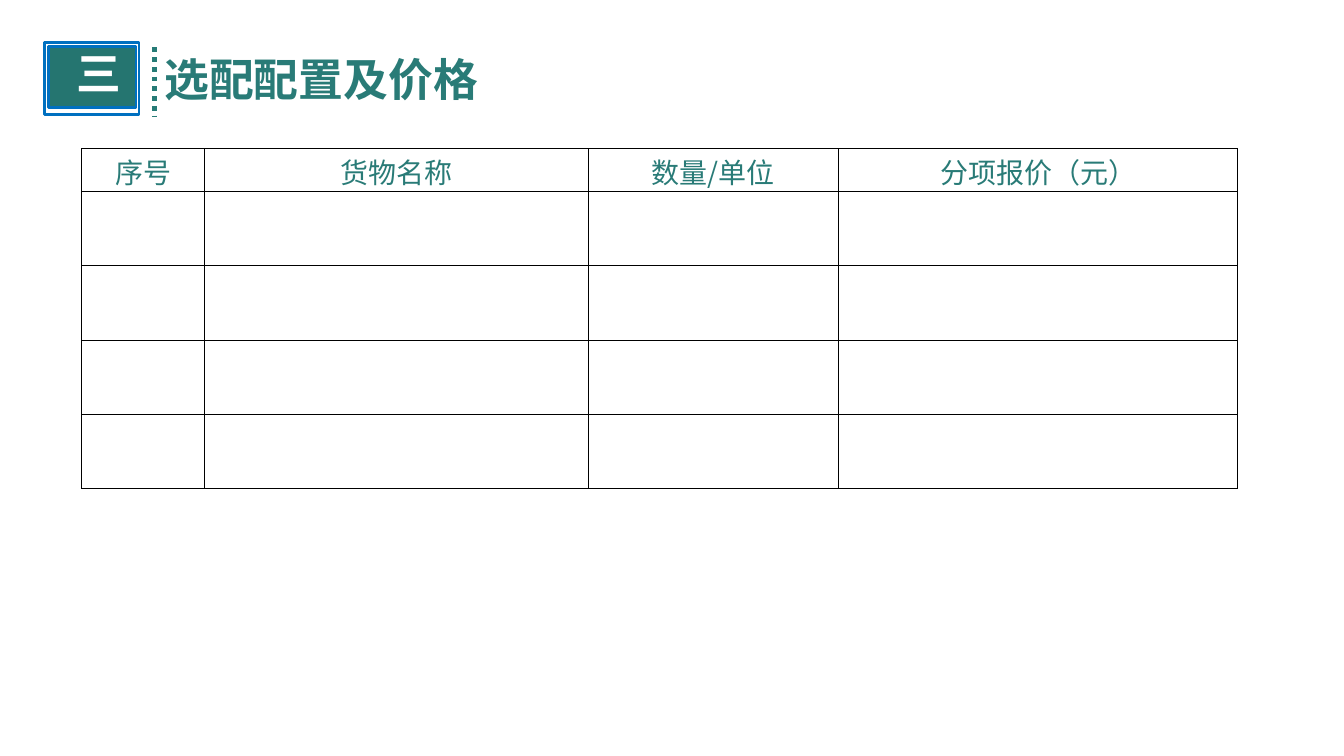
"""Build the slide with the optional items and price table."""
from lxml.etree import SubElement
from pptx import Presentation
from pptx.dml.color import RGBColor
from pptx.enum.dml import MSO_LINE
from pptx.enum.shapes import MSO_CONNECTOR, MSO_SHAPE
from pptx.enum.text import MSO_ANCHOR, MSO_AUTO_SIZE, PP_ALIGN
from pptx.oxml.ns import qn
from pptx.util import Pt

COLORS = {"title": "297B77", "badge": "257570", "dots": "267B76",
          "edge": "0070C0", "white": "FFFFFF", "grid": "000000"}
FONT = "Noto Sans CJK SC"
HEADS = ["序号", "货物名称", "数量/单位", "分项报价（元）"]
WIDTHS = [88, 273.6, 179.2, 285]
ROWS = [30.7] + [53.1] * 4
FRAME = {"margin_top": 0, "margin_bottom": 0, "margin_left": Pt(7.2),
         "margin_right": Pt(7.2), "word_wrap": True,
         "vertical_anchor": MSO_ANCHOR.TOP,
         "auto_size": MSO_AUTO_SIZE.SHAPE_TO_FIT_TEXT}
CELL = {"margin_top": Pt(1.7), "margin_bottom": 0,
        "vertical_anchor": MSO_ANCHOR.TOP}


def color(name):
    return RGBColor.from_string(COLORS[name])


def write(frame, text, size, tint, bold, align):
    para = frame.paragraphs[0]
    para.alignment = align
    para.line_spacing = 1.0
    para.space_before = Pt(0)
    run = para.add_run()
    run.text = text
    style = {"name": FONT, "size": Pt(size), "bold": bold}
    for key, value in style.items():
        setattr(run.font, key, value)
    run.font.color.rgb = color(tint)
    SubElement(run.font._element, qn("a:ea"), typeface=FONT)


deck = Presentation()
deck.slide_width, deck.slide_height = Pt(960), Pt(540)
slide = deck.slides.add_slide(deck.slide_layouts[5])
shapes = slide.shapes

title = shapes.title
place = {"left": 110.2, "top": 36.7, "width": 311.8, "height": 46.1}
for key, value in place.items():
    setattr(title, key, Pt(value))

boxes = [(31.7, 30.2, 67.7, 51.8, "white"), (34.6, 33.1, 62.6, 43.9, "badge")]
for left, top, width, height, tint in boxes:
    box = shapes.add_shape(MSO_SHAPE.RECTANGLE, Pt(left), Pt(top),
                           Pt(width), Pt(height))
    box.shadow.inherit = False
    box.fill.solid()
    box.fill.fore_color.rgb = color(tint)
    box.line.color.rgb = color("edge")
    box.line.width = Pt(2)

number = shapes.add_textbox(Pt(47.5), Pt(32.4), Pt(49.7), Pt(46.1))
for shape, text, tint in [(title, "选配配置及价格", "title"),
                          (number, "三", "white")]:
    for key, value in FRAME.items():
        setattr(shape.text_frame, key, value)
    write(shape.text_frame, text, 32, tint, True, PP_ALIGN.LEFT)

dots = shapes.add_connector(MSO_CONNECTOR.STRAIGHT, Pt(110.2), Pt(33.8),
                            Pt(110.2), Pt(82.8))
dots.line.color.rgb = color("dots")
dots.line.width = Pt(3.5)
dots.line.dash_style = MSO_LINE.ROUND_DOT
SubElement(dots._element.spPr, qn("a:effectLst"))

table = shapes.add_table(len(ROWS), len(WIDTHS), Pt(58.3), Pt(106),
                         Pt(sum(WIDTHS)), Pt(sum(ROWS))).table
table.first_row = table.horz_banding = False
for column, width in zip(table.columns, WIDTHS):
    column.width = Pt(width)
for row, height in zip(table.rows, ROWS):
    row.height = Pt(height)
for cell in table.iter_cells():
    for key, value in CELL.items():
        setattr(cell, key, value)
    props = cell._tc.get_or_add_tcPr()
    for side in "LRTB":
        edge = SubElement(props, qn(f"a:ln{side}"), w=str(Pt(0.5)))
        fill = SubElement(edge, qn("a:solidFill"))
        SubElement(fill, qn("a:srgbClr"), val=COLORS["grid"])
    cell.fill.background()
for cell, head in zip(table.rows[0].cells, HEADS):
    write(cell.text_frame, head, 20, "title", False, PP_ALIGN.CENTER)

deck.save("out.pptx")
